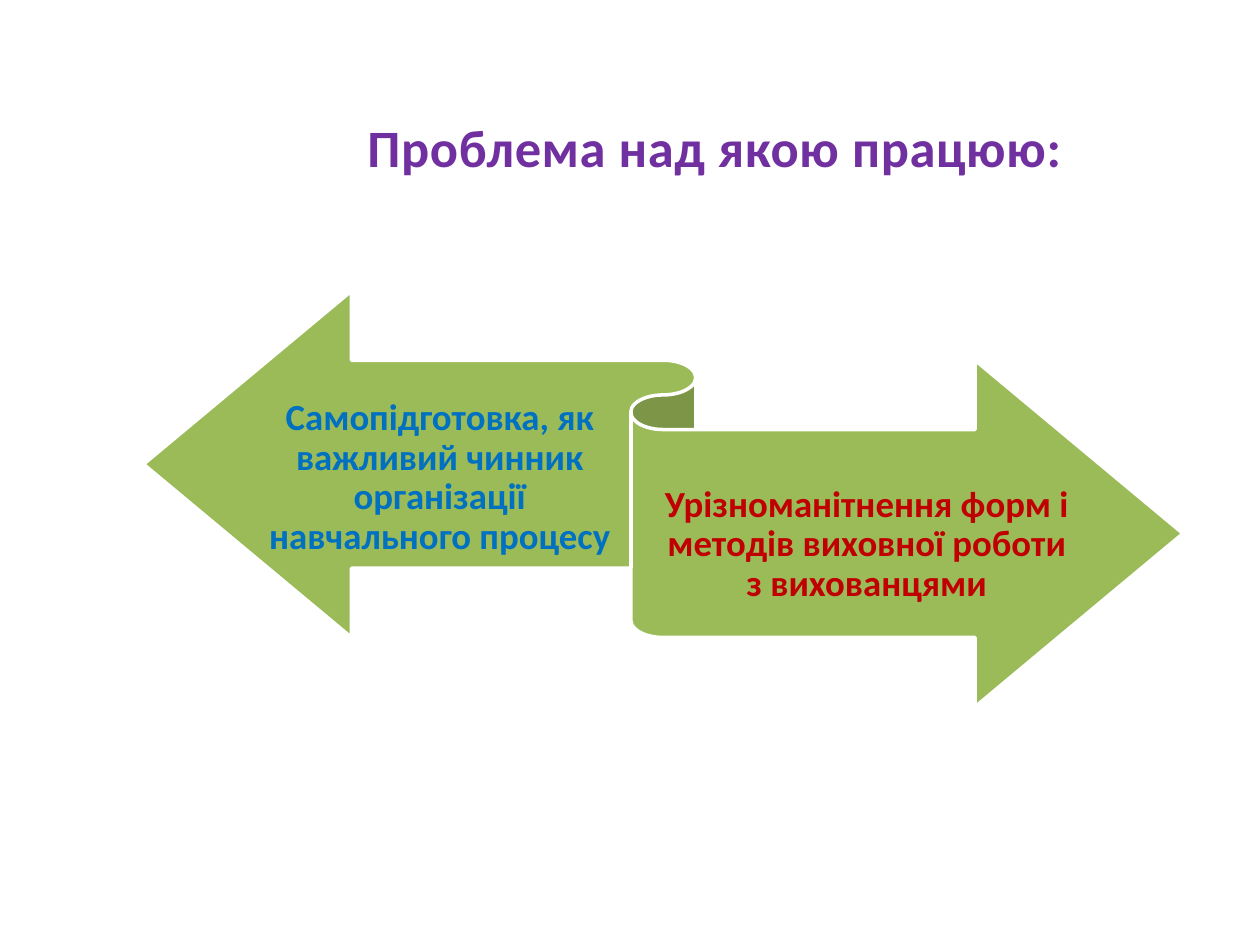
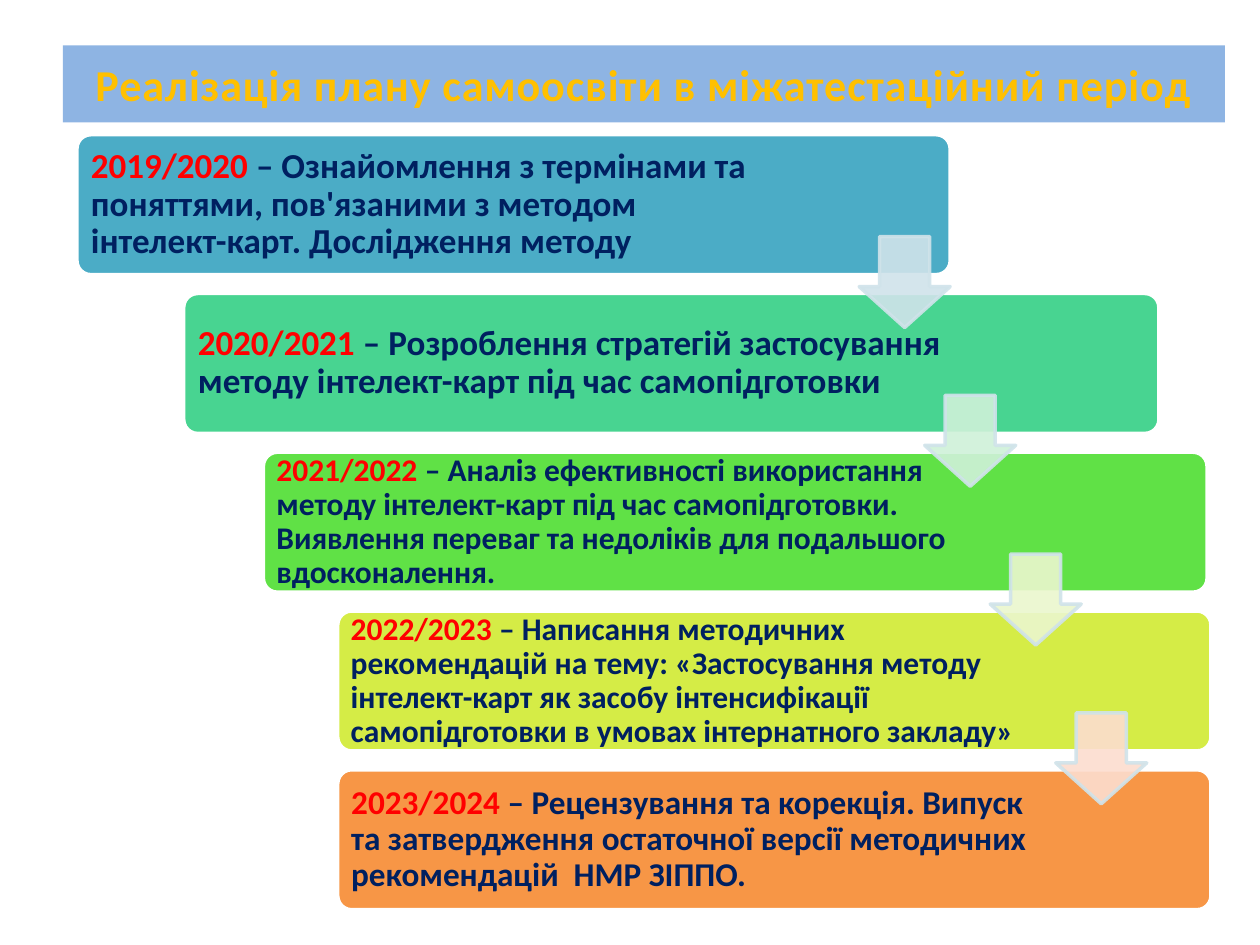
"""Build two slides: the problem ribbon and the self-education plan by school year."""
from lxml.etree import SubElement
from pptx import Presentation
from pptx.dml.color import RGBColor
from pptx.enum.shapes import MSO_SHAPE
from pptx.enum.text import MSO_ANCHOR, PP_ALIGN
from pptx.oxml import parse_xml
from pptx.oxml.ns import nsdecls, qn
from pptx.util import Pt

FONT = "Calibri"
WHITE, GREEN, BAND = "FFFFFF", "9BBB59", "8EB4E3"
PURPLE, GOLD, BLUE, DARK_RED = "7030A0", "FFC000", "0070C0", "C00000"
YEAR_RED, NAVY, ARROW_LINE = "FF0000", "002060", "D0E3EA"
TITLE_OUTLINE = "4F81BD"

PROBLEM_TITLE = "Проблема над якою працюю:"
PROBLEMS = [
    ("Самопідготовка, як важливий чинник організації навчального процесу",
     BLUE, (153.4, 215.3, 195.8, 116.6)),
    ("Урізноманітнення форм і методів виховної роботи з вихованцями",
     DARK_RED, (379.4, 253.4, 231.8, 116.6)),
]

PLAN_TITLE = "Реалізація плану самоосвіти в міжатестаційний період"
STEPS = [
    dict(year="2019/2020", size=20, fill="4BACC6", left=44, width=499, text_width=404,
         text="Ознайомлення з термінами та поняттями, пов'язаними з методом "
              "інтелект-карт. Дослідження методу"),
    dict(year="2020/2021", size=20, fill="48D491", left=105, width=557.3, text_width=453,
         text="Розроблення стратегій застосування методу інтелект-карт "
              "під час самопідготовки"),
    dict(year="2021/2022", size=18, fill="60E146", left=150.5, width=539.3, text_width=438.5,
         text="Аналіз ефективності використання методу інтелект-карт під час "
              "самопідготовки. Виявлення переваг та недоліків для подальшого вдосконалення."),
    dict(year="2022/2023", size=18, fill="D5EC46", left=193, width=499, text_width=405.4,
         text="Написання методичних рекомендацій на тему: «Застосування методу "
              "інтелект-карт як засобу інтенсифікації самопідготовки в умовах "
              "інтернатного закладу»"),
    dict(year="2023/2024", size=19, fill="F79646", left=193, width=499, text_width=405.4,
         text="Рецензування та корекція. Випуск та затвердження остаточної версії "
              "методичних рекомендацій  НМР ЗІППО."),
]
ARROW_FILLS = ["D0E3EA", "CFF1D9", "EBF7CE", "FCDDCF"]
STEP_TOP, STEP_PITCH, STEP_HEIGHT, STEP_INSET = 77, 90.72, 80, 2.4
ARROW_LEFT, ARROW_SHIFT, ARROW_DROP, ARROW_SIZE = 491, 37.44, 58.2, 52


def color(value):
    """Turn a hex string into a colour."""
    return RGBColor.from_string(value)


def add_box(slide, kind, place, fill, line=None, adjustments=(), opacity=None):
    """Add a filled preset shape without shadow."""
    shape = slide.shapes.add_shape(kind, *map(Pt, place))
    shape.shadow.inherit = False
    for index, value in enumerate(adjustments):
        shape.adjustments[index] = value
    shape.fill.solid()
    shape.fill.fore_color.rgb = color(fill)
    if line:
        shape.line.color.rgb = color(line)
        shape.line.width = Pt(2)
    else:
        shape.line.fill.background()
    if opacity:
        for rgb in shape.element.spPr.iter(qn("a:srgbClr")):
            SubElement(rgb, qn("a:alpha"), val=str(opacity * 1000))
    return shape


def write_text(shape, runs, size, align=PP_ALIGN.LEFT, spacing=None, insets=(7.2, 3.6, 7.2, 3.6)):
    """Write one bold paragraph of (text, colour) runs and return the runs."""
    frame = shape.text_frame
    frame.word_wrap = True
    frame.vertical_anchor = MSO_ANCHOR.MIDDLE
    frame.margin_left, frame.margin_top, frame.margin_right, frame.margin_bottom = map(Pt, insets)
    paragraph = frame.paragraphs[0]
    paragraph.alignment = align
    if spacing:
        paragraph.line_spacing = spacing
    for text, fill in runs:
        run = paragraph.add_run()
        run.text = text
        run.font.name = FONT
        run.font.size = Pt(size)
        run.font.bold = True
        run.font.color.rgb = color(fill)
    return paragraph.runs


def add_text(slide, place, runs, size, **layout):
    """Add a text box holding one paragraph."""
    return write_text(slide.shapes.add_textbox(*map(Pt, place)), runs, size, **layout)


def write_title(shape, text, fill, size, tracking, shadow, opacity):
    """Write a centred title with outline, letter spacing and shadow."""
    run = write_text(shape, [(text, fill)], size, align=PP_ALIGN.CENTER)[0]
    properties = run.font._element
    properties.set("spc", str(tracking))
    properties.insert(0, parse_xml(
        f'<a:ln {nsdecls("a")} w="9525"><a:solidFill><a:srgbClr val="{TITLE_OUTLINE}"/>'
        '</a:solidFill></a:ln>'))
    properties.find(qn("a:solidFill")).addnext(parse_xml(
        f'<a:effectLst {nsdecls("a")}><a:outerShdw blurRad="38100" dist="25400" dir="2700000">'
        f'<a:srgbClr val="{shadow}"><a:alpha val="{opacity * 1000}"/></a:srgbClr>'
        '</a:outerShdw></a:effectLst>'))


def build_problem(slide):
    """Draw the two-way ribbon with its two problems."""
    title = slide.shapes.add_textbox(*map(Pt, (184.3, 49, 448.6, 69.8)))
    write_title(title, PROBLEM_TITLE, PURPLE, 30, 40, TITLE_OUTLINE, 60)
    add_box(slide, MSO_SHAPE.LEFT_RIGHT_RIBBON, (82, 166.3, 594, 237.6), GREEN, WHITE)
    for text, fill, place in PROBLEMS:
        add_text(slide, place, [(text, fill)], 21, align=PP_ALIGN.CENTER,
                 spacing=0.9, insets=(0, 5.8, 0, 6.5))


def build_plan(slide):
    """Draw the staircase of yearly steps and the arrows between them."""
    band = add_box(slide, MSO_SHAPE.RECTANGLE, (36, 26, 664, 44), BAND)
    write_title(band, PLAN_TITLE, GOLD, 25.2, 50, "000000", 40)
    for index, step in enumerate(STEPS):
        top = STEP_TOP + index * STEP_PITCH
        add_box(slide, MSO_SHAPE.ROUNDED_RECTANGLE,
                (step["left"], top, step["width"], STEP_HEIGHT), step["fill"], WHITE, [0.1])
        add_text(slide, (step["left"] + STEP_INSET, top + STEP_INSET,
                         step["text_width"], STEP_HEIGHT - 2 * STEP_INSET),
                 [(step["year"] + " ", YEAR_RED), ("– " + step["text"], NAVY)], step["size"],
                 spacing=0.9, insets=[step["size"] * 0.28] * 4)
    for index, fill in enumerate(ARROW_FILLS):
        place = (ARROW_LEFT + index * ARROW_SHIFT, STEP_TOP + index * STEP_PITCH + ARROW_DROP,
                 ARROW_SIZE, ARROW_SIZE)
        add_box(slide, MSO_SHAPE.DOWN_ARROW, place, fill, ARROW_LINE, [0.55, 0.45], 90)


def main():
    """Create the presentation and save it."""
    presentation = Presentation()
    presentation.slide_width, presentation.slide_height = Pt(720), Pt(540)
    for build in (build_problem, build_plan):
        build(presentation.slides.add_slide(presentation.slide_layouts[6]))
    presentation.save("out.pptx")


if __name__ == "__main__":
    main()
